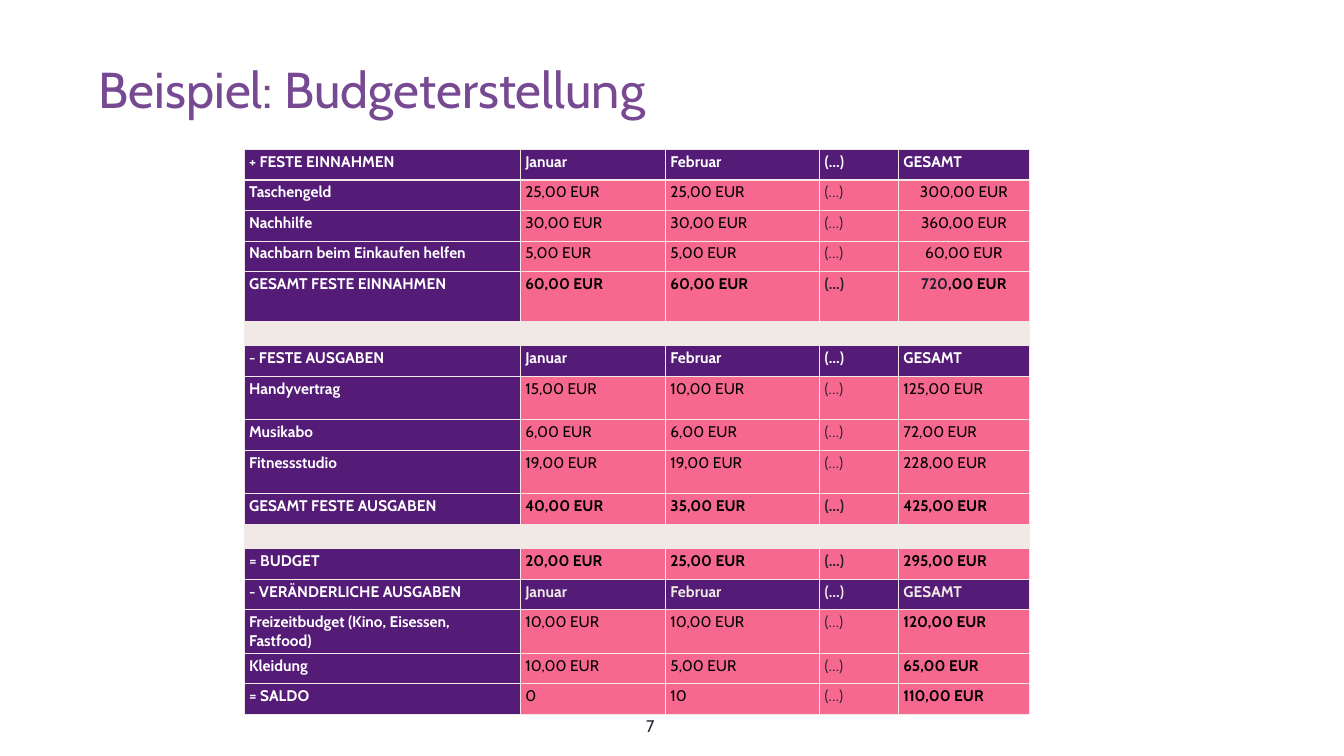
from lxml import etree
from pptx import Presentation
from pptx import util as u
from pptx.dml.color import RGBColor
from pptx.enum import text
from pptx.oxml import ns

PURPLE = RGBColor(0x55, 0x1C, 0x77)
PINK = RGBColor(0xF6, 0x68, 0x8E)
CREAM = RGBColor(0xF0, 0xE9, 0xE5)
WHITE = RGBColor(0xFF, 0xFF, 0xFF)
BLACK = RGBColor(0, 0, 0)
INK = RGBColor(0x25, 0x21, 0x31)
FONT = "Cabin"

MONTHS = ["Januar", "Februar", "(…)", "GESAMT"]
COLUMN_WIDTHS = [2.74, 1.44, 1.53, 0.78, 1.3]
GAP_HEIGHT, TALL_HEIGHT, INCOME_TOTAL_HEIGHT = 0.24, 0.43, 0.49

BUDGET = [
    ("head", None, ["+ FESTE EINNAHMEN", *MONTHS]),
    ("income", None, ["Taschengeld", "25,00 EUR", "25,00 EUR", "(…)", "300,00 EUR"]),
    ("income", None, ["Nachhilfe", "30,00 EUR", "30,00 EUR", "(…)", "360,00 EUR"]),
    ("income", None, ["Nachbarn beim Einkaufen helfen", "5,00 EUR", "5,00 EUR", "(…)", "60,00 EUR"]),
    ("income total", INCOME_TOTAL_HEIGHT,
     ["GESAMT FESTE EINNAHMEN", "60,00 EUR", "60,00 EUR", "(…)", "720|,00 EUR"]),
    ("gap", GAP_HEIGHT, [""] * 5),
    ("head", None, ["- FESTE AUSGABEN", *MONTHS]),
    ("expense", TALL_HEIGHT, ["Handyvertrag", "15,00 EUR", "10,00 EUR", "(…)", "125,00 EUR"]),
    ("expense", None, ["Musikabo", "6,00 EUR", "6,00 EUR", "(…)", "72,00 EUR"]),
    ("expense", TALL_HEIGHT, ["Fitnessstudio", "19,00 EUR", "19,00 EUR", "(…)", "228,00 EUR"]),
    ("total", None, ["GESAMT FESTE AUSGABEN", "40,00 EUR", "35,00 EUR", "(…)", "425,00 EUR"]),
    ("gap", GAP_HEIGHT, [""] * 5),
    ("total", None, ["= BUDGET", "20,00 EUR", "25,00 EUR", "(…)", "295,00 EUR"]),
    ("soft head", None, ["- VERÄNDERLICHE AUSGABEN", *MONTHS]),
    ("variable", TALL_HEIGHT,
     ["Freizeitbudget (Kino, Eisessen, Fastfood)", "10,00 EUR", "10,00 EUR", "(…)", "120,00 EUR"]),
    ("variable", None, ["Kleidung", "10,00 EUR", "5,00 EUR", "(…)", "65,00 EUR"]),
    ("variable", None, ["= SALDO", "0", "10", "(…)", "110,00 EUR"]),
]


def style_run(run, size, color, bold=False):
    run.font.name = FONT
    run.font.size = u.Pt(size)
    run.font.bold = bold
    run.font.color.rgb = color


def set_borders(cell, top=0.5, bottom=0.5):
    properties = cell._tc.get_or_add_tcPr()
    edges = [("lnL", 0.5), ("lnR", 0.5), ("lnT", top), ("lnB", bottom)]
    for position, (edge, width) in enumerate(edges):
        line = etree.Element(ns.qn(f"a:{edge}"), w=str(u.Pt(width)))
        fill = etree.SubElement(line, ns.qn("a:solidFill"))
        etree.SubElement(fill, ns.qn("a:srgbClr"), val=str(CREAM))
        properties.insert(position, line)


def cell_colors(role, column):
    if role == "gap":
        return CREAM, INK
    if column == 0 or role == "head":
        return PURPLE, WHITE
    if role == "soft head":
        return PURPLE, CREAM
    return PINK, INK if column == 3 else BLACK


def fill_cell(cell, role, column, value):
    background, color = cell_colors(role, column)
    cell.fill.solid()
    cell.fill.fore_color.rgb = background
    cell.margin_left = cell.margin_right = u.Inches(0.05)
    cell.margin_top = cell.margin_bottom = u.Inches(0.03)
    paragraph = cell.text_frame.paragraphs[0]
    if not value:
        etree.SubElement(paragraph._p, ns.qn("a:endParaRPr"), sz="1100")
        return
    if role.startswith("income") and column == 4:
        paragraph.alignment = text.PP_ALIGN.CENTER
    bold = (column == 0 or role.endswith(("head", "total"))
            or (role == "variable" and column == 4))
    parts = value.split("|")
    for part in parts:
        run = paragraph.add_run()
        run.text = part
        style_run(run, 11, color if part == parts[-1] else INK, bold)


def add_title(slide, left, top, width, height):
    title = slide.shapes.title
    title.left, title.top, title.width, title.height = left, top, width, height
    frame = title.text_frame
    frame.text = "Beispiel: Budgeterstellung"
    frame.vertical_anchor = text.MSO_ANCHOR.MIDDLE
    heading = frame.paragraphs[0]
    heading.alignment = text.PP_ALIGN.LEFT
    heading.line_spacing = 0.9
    style_run(heading.runs[0], 36, PURPLE)
    color = heading.runs[0]._r.find(".//" + ns.qn("a:srgbClr"))
    etree.SubElement(color, ns.qn("a:alpha"), val="80000")


def add_budget(slide, left, top, width, height):
    table = slide.shapes.add_table(
        len(BUDGET), len(COLUMN_WIDTHS), left, top, width, height).table
    table.first_row = table.horz_banding = False
    for column, share in zip(table.columns, COLUMN_WIDTHS):
        column.width = int(width * share / sum(COLUMN_WIDTHS))
    fixed = [u.Inches(size) for _, size, _ in BUDGET if size]
    plain_height = (height - sum(fixed)) // (len(BUDGET) - len(fixed))
    for index, (role, size, values) in enumerate(BUDGET):
        table.rows[index].height = u.Inches(size) if size else plain_height
        for column, value in enumerate(values):
            cell = table.cell(index, column)
            fill_cell(cell, role, column, value)
            set_borders(cell, 2 if index == 1 else 0.5, 2 if index == 0 else 0.5)


def add_page_number(slide, left, top, width, height):
    frame = slide.shapes.add_textbox(left, top, width, height).text_frame
    frame.word_wrap = True
    frame.vertical_anchor = text.MSO_ANCHOR.MIDDLE
    frame.text = "7"
    style_run(frame.paragraphs[0].runs[0], 12, INK)


def main():
    deck = Presentation()
    deck.slide_width, deck.slide_height = u.Inches(13.33), u.Inches(7.5)
    slide = deck.slides.add_slide(deck.slide_layouts[5])
    add_page_number(slide, *map(u.Inches, (6.31, 7.03, 0.55, 0.35)))
    add_title(slide, *map(u.Inches, (0.88, 0.53, 10.28, 0.76)))
    add_budget(slide, *map(u.Inches, (2.42, 1.48, 7.79, 5.6)))
    deck.save("out.pptx")


if __name__ == "__main__":
    main()
